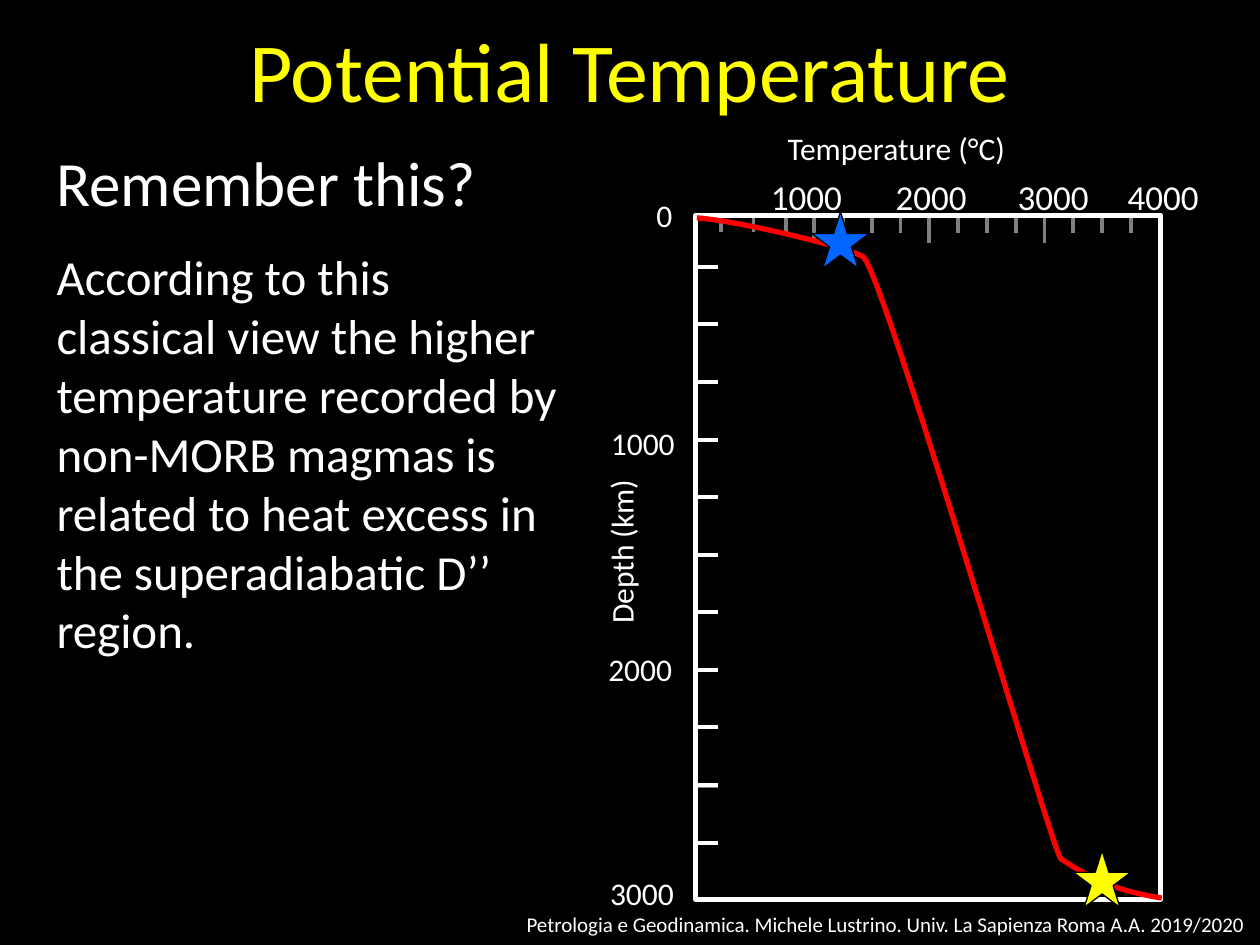
from pptx import Presentation
from pptx.dml.color import RGBColor
from pptx.enum.shapes import MSO_CONNECTOR, MSO_SHAPE
from pptx.enum.text import MSO_ANCHOR, PP_ALIGN
from pptx.oxml.ns import qn
from pptx.util import Pt
from lxml import etree

COLORS = {
    "black": "000000", "white": "FFFFFF", "title": "FFFF00", "tick": "808080",
    "geotherm": "FF0000", "shallow": "0066FF", "deep": "FFFF00",
}


def rgb(name):
    return RGBColor.from_string(COLORS[name])


def add_text(slide, text, box, size, color="white", align=PP_ALIGN.LEFT,
             wrap=True, anchor=MSO_ANCHOR.TOP):
    s = slide.shapes.add_textbox(*map(Pt, box))
    tf = s.text_frame
    tf.word_wrap = wrap
    tf.vertical_anchor = anchor
    p = tf.paragraphs[0]
    p.text = text
    p.alignment = align
    p.font.name = "Calibri"
    p.font.size = Pt(size)
    p.font.color.rgb = rgb(color)
    return s


def add_tick(slide, x1, y1, x2, y2, color):
    s = slide.shapes.add_connector(MSO_CONNECTOR.STRAIGHT, *map(Pt, (x1, y1, x2, y2)))
    s.line.width = Pt(2.25)
    s.line.color.rgb = rgb(color)
    etree.SubElement(s._element.spPr, qn("a:effectLst"))


def add_star(slide, x, y, color):
    s = slide.shapes.add_shape(MSO_SHAPE.STAR_5_POINT, Pt(x), Pt(y), Pt(33), Pt(32.5))
    s.shadow.inherit = False
    s.fill.solid()
    s.fill.fore_color.rgb = rgb(color)
    s.line.color.rgb = rgb("black")
    s.line.width = Pt(0.75)


def bezier(p0, p1, p2, p3, steps=24):
    """Points along a cubic curve, without its start."""
    points = []
    for i in range(1, steps + 1):
        t = i / steps
        u = 1 - t
        points.append(tuple(u**3 * a + 3 * u * u * t * b + 3 * u * t * t * c + t**3 * d
                            for a, b, c, d in zip(p0, p1, p2, p3)))
    return points


def add_geotherm(slide, left, top):
    start = (0.7, 1.5)
    segments = [
        ((26.6, 3.6), (85.7, 18), (95.8, 23.8)),
        ((107.3, 32.4), (204.5, 365.8), (208.8, 368)),
        ((221.8, 375.8), (234, 385.2), (266.4, 390.2)),
    ]
    points = [start]
    for segment in segments:
        points += bezier(points[-1], *segment)
    x0, y0 = left + start[0], top + start[1]
    builder = slide.shapes.build_freeform(Pt(x0), Pt(y0))
    builder.add_line_segments([(Pt(left + x), Pt(top + y)) for x, y in points[1:]],
                              close=False)
    s = builder.convert_to_shape()
    s.shadow.inherit = False
    s.fill.background()
    s.line.color.rgb = rgb("geotherm")
    s.line.width = Pt(3)


def add_depth_axis(slide, left, top):
    for label, x, y in (("0", -29.5, -14.3), ("1000", -55.5, 116),
                        ("2000", -57, 245), ("3000", -56, 373)):
        add_text(slide, label, (left + x, top + y, 51, 29), 18, wrap=False)
    title = add_text(slide, "Depth (km)", (left - 91.5, top + 177, 98, 29), 18, wrap=False)
    title.rotation = 270
    add_tick(slide, left, top + 326.2, left + 13, top + 326.2, "tick")
    for i in range(11):
        y = top + 29.5 + 32.9 * i
        add_tick(slide, left, y, left + 13, y, "white")


def add_temperature_axis(slide, left, top):
    add_text(slide, "Temperature (°C)", (left + 45.4, top - 53, 142, 29), 18, wrap=False)
    for label, x in (("1000", 36), ("2000", 107.3), ("3000", 177), ("4000", 239.8)):
        add_text(slide, label, (left + x, top - 26.5, 55.5, 32), 20, wrap=False)
    ticks = [(14.4 + 18.7 * i, 9.5) for i in range(3)]
    ticks += [(67.7 + 16.46 * i, 10 if i % 4 else 16) for i in range(12)]
    for x, length in ticks:
        add_tick(slide, left + x, top, left + x, top + length, "tick")


def add_depth_plot(slide, left, top, width, height):
    add_depth_axis(slide, left, top)
    add_temperature_axis(slide, left, top)
    frame = slide.shapes.add_shape(MSO_SHAPE.RECTANGLE, *map(Pt, (left, top, width, height)))
    frame.shadow.inherit = False
    frame.fill.background()
    frame.line.color.rgb = rgb("white")
    frame.line.width = Pt(3)
    add_geotherm(slide, left, top)
    add_star(slide, left + 66.3, top - 2, "shallow")
    add_star(slide, left + 215.8, top + 363, "deep")


def add_commentary(slide, left, top, width):
    add_text(slide, "Remember this?", (left, top, width, 51), 36)
    add_text(slide, "According to this classical view the higher temperature recorded by "
             "non-MORB magmas is related to heat excess in the superadiabatic D’’ region.",
             (left, top + 59, width, 245), 28)


def main():
    prs = Presentation()
    prs.slide_width, prs.slide_height = Pt(720), Pt(540)
    slide = prs.slides.add_slide(prs.slide_layouts[6])
    slide.background.fill.solid()
    slide.background.fill.fore_color.rgb = rgb("black")
    add_text(slide, "Petrologia e Geodinamica. Michele Lustrino. "
             "Univ. La Sapienza Roma A.A. 2019/2020",
             (286, 517, 432.5, 21.6), 12, align=PP_ALIGN.RIGHT, anchor=MSO_ANCHOR.MIDDLE)
    add_text(slide, "Potential Temperature", (0, 7.2, 720, 65), 48, "title", PP_ALIGN.CENTER)
    add_commentary(slide, 25.2, 78.5, 301.7)
    add_depth_plot(slide, 397.5, 123, 265.7, 391)
    prs.save("out.pptx")


if __name__ == "__main__":
    main()
